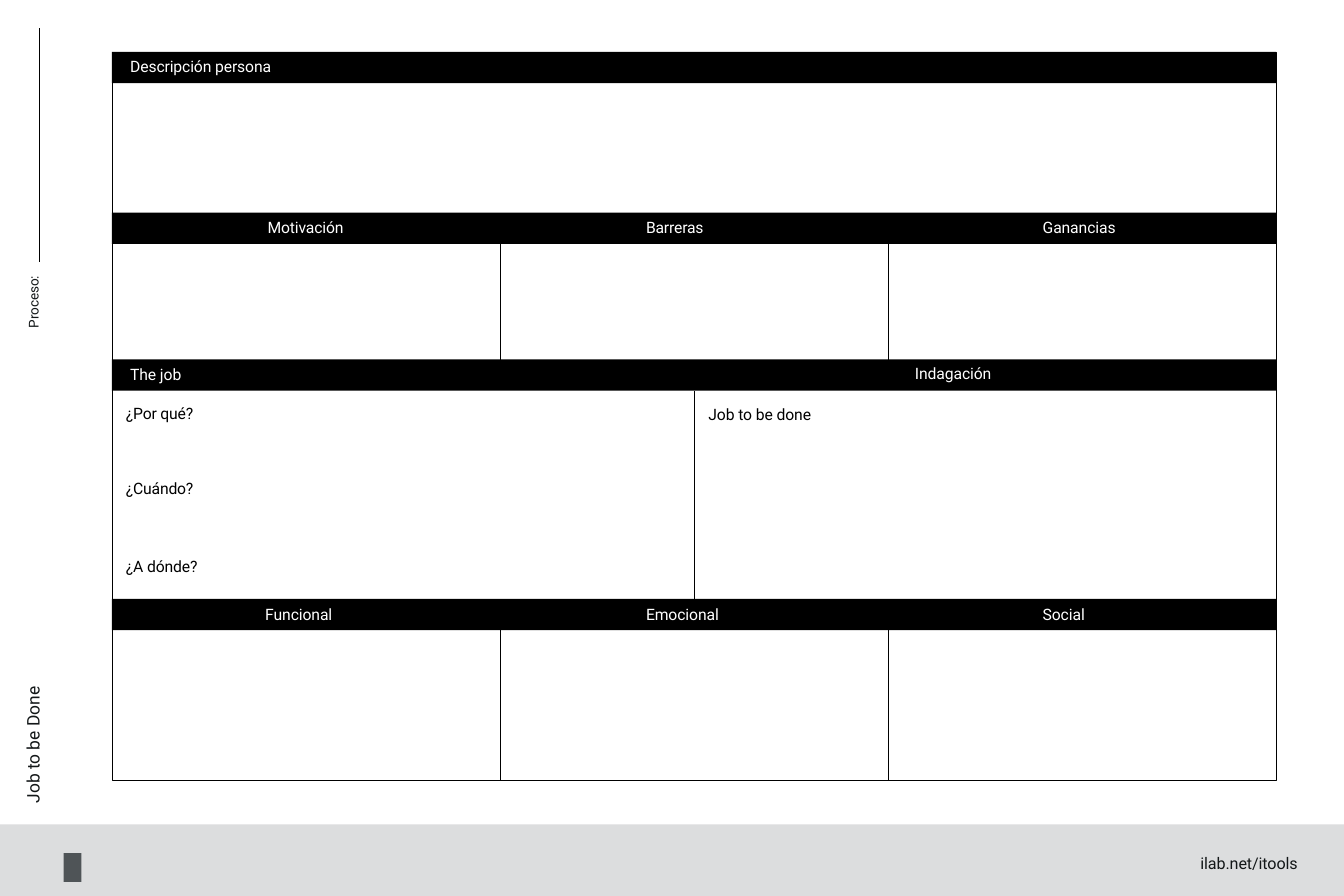
from dataclasses import dataclass

from pptx import Presentation
from pptx import util as u
from pptx.dml import color as clr
from pptx.enum import shapes, text
from pptx.oxml import ns, xmlchemy as _xml  # noqa: F401
from pptx.oxml import parse_xml

HUES = {"ink": "000000", "paper": "FFFFFF", "note": "131718",
        "bar": "DCDDDE", "mark": "4F5457"}
LEFT, TOP, WIDE, HIGH = 1.83, 0.85, 19.05, 11.92
BAND = 0.51
THIRD = WIDE / 3
MID = LEFT + WIDE / 2
FRAME = {"word_wrap": True, "auto_size": text.MSO_AUTO_SIZE.NONE,
         "margin_left": 0, "margin_right": 0, "margin_bottom": 0}


@dataclass
class Label:
    words: str
    x: float
    y: float
    wide: float
    hue: str = "paper"
    size: float = 18.5
    high: float = 0.34
    inset: float = 0.03
    track: int = -15
    lead: float = 0
    turn: bool = False


@dataclass
class Block:
    x: float
    y: float
    wide: float
    high: float
    hue: str = "ink"


@dataclass
class Rule:
    x: float
    y: float
    end: float


def rgb(name: str) -> clr.RGBColor:
    return clr.RGBColor.from_string(HUES[name])


def draw_block(tree, b: Block, hollow: bool = False) -> None:
    shape = tree.add_shape(shapes.MSO_SHAPE.RECTANGLE, u.Inches(b.x),
                           u.Inches(b.y), u.Inches(b.wide), u.Inches(b.high))
    shape.shadow.inherit = False
    if hollow:
        shape.fill.background()
        shape.line.color.rgb = rgb(b.hue)
        shape.line.width = u.Pt(0.62)
    else:
        shape.fill.solid()
        shape.fill.fore_color.rgb = rgb(b.hue)
        shape.line.fill.background()


def draw_rule(tree, r: Rule) -> None:
    line = tree.add_connector(shapes.MSO_CONNECTOR.STRAIGHT, u.Inches(r.x),
                              u.Inches(r.y), u.Inches(r.x), u.Inches(r.end))
    line.line.color.rgb = rgb("ink")
    line.line.width = u.Pt(0.62)
    line.element.spPr.append(
        parse_xml(f"<a:effectLst {ns.nsdecls('a')}/>"))


def draw_label(tree, t: Label) -> None:
    box = tree.add_textbox(u.Inches(t.x), u.Inches(t.y),
                           u.Inches(t.wide), u.Inches(t.high))
    frame = box.text_frame
    for key, value in FRAME.items():
        setattr(frame, key, value)
    frame.margin_top = u.Inches(t.inset)
    if t.turn:
        box.element.txBody.bodyPr.set("vert", "vert270")
    para = frame.paragraphs[0]
    if t.lead:
        para.line_spacing = u.Pt(t.lead)
    run = para.add_run()
    run.text = t.words
    style = {"name": "Roboto", "size": u.Pt(t.size)}
    for key, value in style.items():
        setattr(run.font, key, value)
    run.font.color.rgb = rgb(t.hue)
    for props in box.element.iter(ns.qn("a:rPr")):
        props.set("spc", str(t.track))


def main() -> None:
    deck = Presentation()
    deck.slide_width, deck.slide_height = u.Inches(21.99), u.Inches(14.66)
    tree = deck.slides.add_slide(deck.slide_layouts[6]).shapes

    # Footer bar and plain mark
    draw_block(tree, Block(0, 13.49, 21.99, 1.17, "bar"))
    draw_block(tree, Block(1.04, 13.96, 0.29, 0.47, "mark"))

    # Column rules and outer frame
    rules = [Rule(0.64, 0.46, 4.28), Rule(MID, 6.4, 9.82)]
    for y, end in ((3.74, 6.1), (10.06, 12.76)):
        rules += [Rule(LEFT + THIRD * i, y, end) for i in (1, 2)]
    for rule in rules:
        draw_rule(tree, rule)
    draw_block(tree, Block(LEFT, TOP, WIDE, HIGH), hollow=True)

    # Black heading bands
    for y in (TOP, 3.48, 5.88, 9.8):
        draw_block(tree, Block(LEFT, y, WIDE, BAND))

    # Headings, prompts and margin notes
    labels = [
        Label("Descripción persona", 2.13, 0.9, 2.46),
        Label("Motivación", 4.38, 3.54, 1.31, track=-20),
        Label("Barreras", 10.57, 3.54, 1.03, track=-20),
        Label("Ganancias", 17.06, 3.54, 1.29, track=-10),
        Label("The job", 2.13, 5.94, 0.89, track=-10),
        Label("Indagación", 14.97, 5.92, 1.34, track=-10),
        Label("¿Por qué?", 2.06, 6.58, 1.18, "ink", track=-20),
        Label("¿Cuándo?", 2.06, 7.8, 1.2, "ink", track=-20),
        Label("¿A dónde?", 2.06, 9.08, 1.26, "ink"),
        Label("Job to be done", 11.59, 6.59, 1.78, "ink", track=-10),
        Label("Funcional", 4.34, 9.86, 1.17, track=-10),
        Label("Emocional", 10.57, 9.86, 1.27, track=-10),
        Label("Social", 17.06, 9.86, 0.75, track=-10),
        Label("ilab.net/itools", 19.64, 14, 1.72, "note", 19, 0.3, 0,
              -10, 20.1),
        Label("Job to be Done", 0.41, 11.09, 0.31, "note", 20.5, 2.05, 0,
              -5, 21.2, True),
        Label("Proceso:", 0.41, 4.43, 0.29, "note", 16, 0.94, 0, -10,
              turn=True),
    ]
    for label in labels:
        draw_label(tree, label)

    deck.save("out.pptx")


if __name__ == "__main__":
    main()
